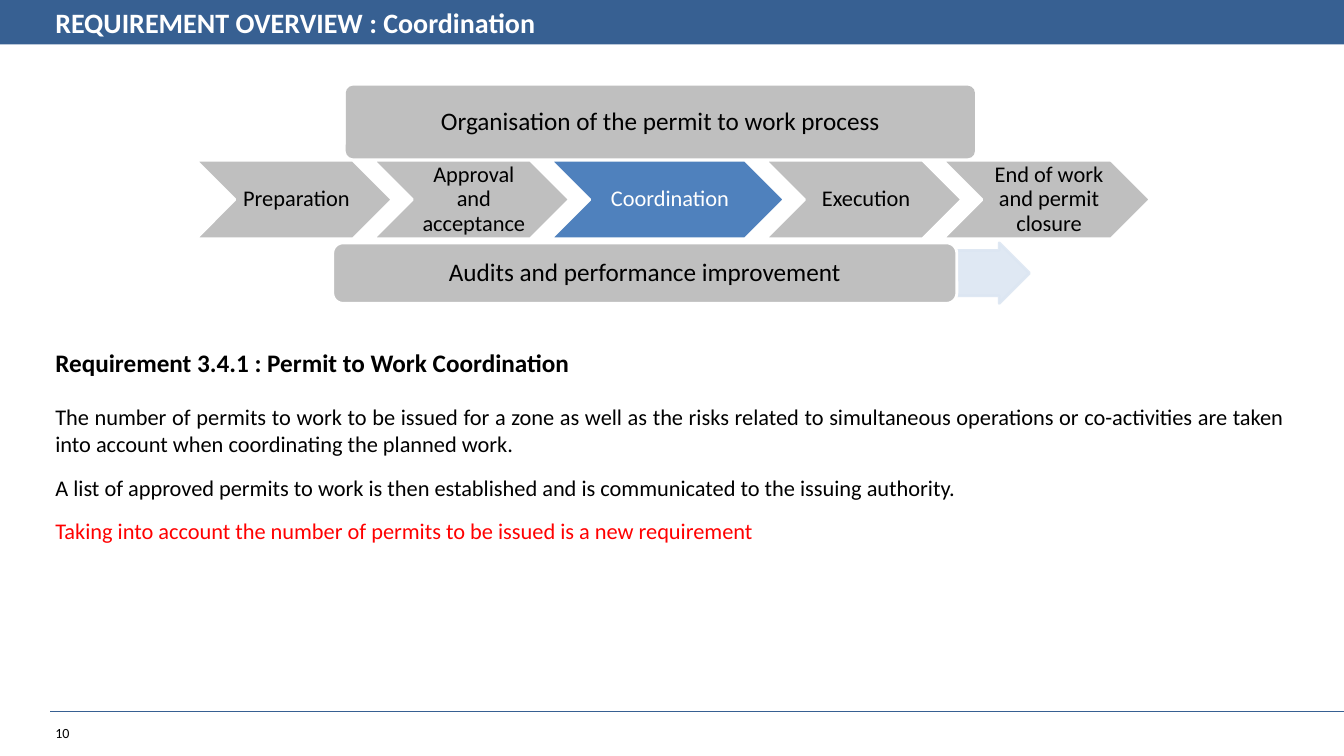
from lxml import etree
from pptx import Presentation
from pptx.dml.color import RGBColor
from pptx.enum import shapes, text
from pptx.oxml import ns
from pptx.util import Inches, Pt

NAVY = RGBColor(0x37, 0x60, 0x92)
BLUE = RGBColor(0x4F, 0x81, 0xBD)
PALE = RGBColor(0xDC, 0xE6, 0xF2)
GREY = RGBColor(0xBF, 0xBF, 0xBF)
RED = RGBColor(0xFF, 0, 0)
WHITE = RGBColor(0xFF, 0xFF, 0xFF)
BLACK = RGBColor(0, 0, 0)
KIND = shapes.MSO_SHAPE
LEFT, MID, JUST = text.PP_ALIGN.LEFT, text.PP_ALIGN.CENTER, text.PP_ALIGN.JUSTIFY

TITLE = "REQUIREMENT OVERVIEW : Coordination"
PAGE = "10"
# label, width, fill, font colour
STEPS = [
    ("Preparation", 1.95, GREY, BLACK),
    ("Approval and acceptance", 1.95, GREY, BLACK),
    ("Coordination", 2.32, BLUE, WHITE),
    ("Execution", 1.95, GREY, BLACK),
    ("End of work and permit closure", 2.06, GREY, BLACK),
]
# label, place, corner, outline
BARS = [
    ("Organisation of the permit to work process", (3.43, 0.85, 6.24, 0.72), 0.1, None),
    ("Audits and performance improvement", (3.3, 2.41, 6.19, 0.6), 0.17, WHITE),
]
BODY = [
    ("Requirement 3.4.1 : Permit to Work Coordination",
     dict(size=18, bold=True, after=12)),
    ("The number of permits to work to be issued for a zone as well as the risks "
     "related to simultaneous operations or co-activities are taken into account "
     "when coordinating the planned work.",
     dict(size=16, align=JUST, before=6, after=6)),
    ("A list of approved permits to work is then established and is communicated "
     "to the issuing authority.",
     dict(size=16, align=JUST, before=6, after=6)),
    ("Taking into account the number of permits to be issued is a new requirement",
     dict(size=16, color=RED, before=6, after=6)),
]
STEP_X, STEP_Y, STEP_H, LAP = 1.94, 1.59, 0.78, 0.19

deck = Presentation()
deck.slide_width, deck.slide_height = Inches(13.33), Inches(7.5)
slide = deck.slides.add_slide(deck.slide_layouts[6])


def write(para, words, size=16, color=BLACK, bold=False, align=LEFT,
          before=0, after=0, lines=None):
    para.text = words
    para.alignment = align
    para.space_before, para.space_after = Pt(before), Pt(after)
    if lines:
        para.line_spacing = lines
    font = para.font
    font.name, font.size, font.bold = "Calibri", Pt(size), bold
    font.color.rgb = color


def frame(item, pads=(0.1, 0.05, 0.1, 0.05), anchor=text.MSO_ANCHOR.MIDDLE):
    """Set wrap, margins and anchor of a shape's text; return its text frame."""
    box = item.text_frame
    box.word_wrap = True
    box.vertical_anchor = anchor
    box.margin_left, box.margin_top, box.margin_right, box.margin_bottom = map(Inches, pads)
    return box


def draw(kind, place, fill, edge=None):
    item = slide.shapes.add_shape(kind, *map(Inches, place))
    item.shadow.inherit = False
    item.fill.solid()
    item.fill.fore_color.rgb = fill
    if edge is None:
        item.line.fill.background()
    else:
        item.line.color.rgb = edge
        item.line.width = Pt(2)
    return item


def label(place):
    return slide.shapes.add_textbox(*map(Inches, place))


# Page furniture
rule = slide.shapes.add_connector(
    shapes.MSO_CONNECTOR.STRAIGHT, *map(Inches, (0.5, 7.06, 13.33, 7.06)))
rule.line.color.rgb = NAVY
rule.line.width = Pt(0.75)
etree.SubElement(rule.element.spPr, ns.qn("a:effectLst"))
draw(KIND.RECTANGLE, (0, 0, 13.33, 0.44), NAVY)
for words, place, look in [
    (PAGE, (0.45, 7.14, 0.71, 0.27), dict(size=10)),
    (TITLE, (0.45, 0, 10.47, 0.44), dict(size=20, bold=True, color=WHITE)),
]:
    write(frame(label(place)).paragraphs[0], words, **look)

# Requirement text
box = frame(label((0.45, 3.4, 12.39, 3.78)), anchor=text.MSO_ANCHOR.TOP)
for i, (words, look) in enumerate(BODY):
    write(box.add_paragraph() if i else box.paragraphs[0], words, **look)

# Process diagram
x = STEP_X
for words, width, fill, color in STEPS:
    step = draw(KIND.CHEVRON, (x, STEP_Y, width, STEP_H), fill, WHITE)
    write(frame(step, (0.07, 0.02, 0.02, 0.02)).paragraphs[0], words,
          color=color, align=MID, lines=0.9)
    x += width - LAP

arrow = draw(KIND.RIGHT_ARROW, (9.33, 2.41, 0.88, 0.6), PALE, PALE)
arrow.adjustments[0], arrow.adjustments[1] = 0.75, 0.5
for tint in arrow.element.spPr.iter(ns.qn("a:srgbClr")):
    etree.SubElement(tint, ns.qn("a:alpha"), val="90000")

for words, place, corner, edge in BARS:
    bar = draw(KIND.ROUNDED_RECTANGLE, place, GREY, edge)
    bar.adjustments[0] = corner
    write(frame(bar).paragraphs[0], words, size=18, align=MID, lines=0.9)

deck.save("out.pptx")
